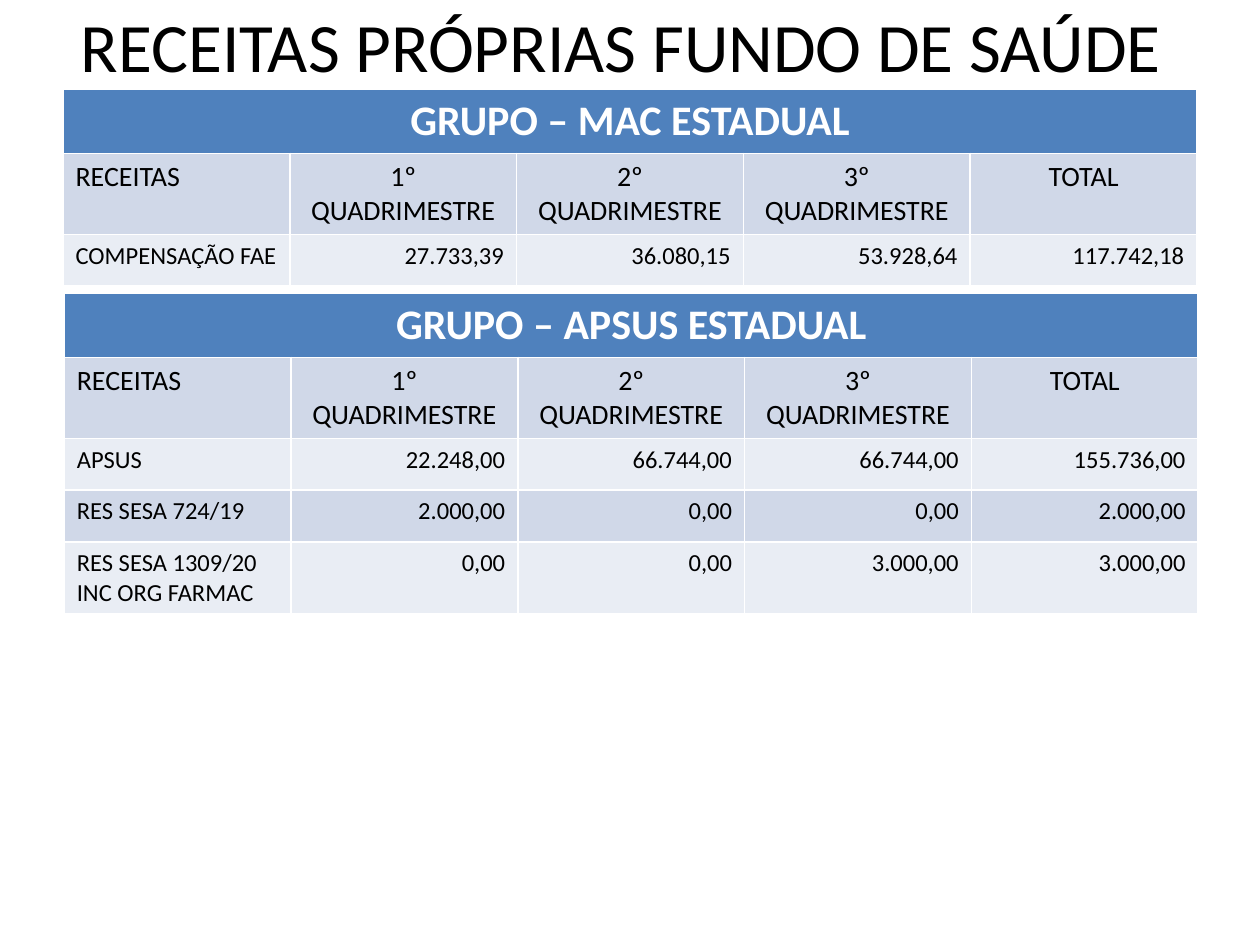
import pptx
import pptx.dml.color
import pptx.enum.text
import pptx.util

Inches = pptx.util.Inches
ALIGN = pptx.enum.text.PP_ALIGN
ANCHOR = pptx.enum.text.MSO_ANCHOR

TITLE = "RECEITAS PRÓPRIAS FUNDO DE SAÚDE"
HEADINGS = ["RECEITAS", "1º QUADRIMESTRE", "2º QUADRIMESTRE", "3º QUADRIMESTRE", "TOTAL"]
GROUPS = [
    {"name": "GRUPO – MAC ESTADUAL", "at": (0.5, 0.71), "rows": [
        ["COMPENSAÇÃO FAE", "27.733,39", "36.080,15", "53.928,64", "117.742,18"],
    ]},
    {"name": "GRUPO – APSUS ESTADUAL", "at": (0.51, 2.33), "rows": [
        ["APSUS", "22.248,00", "66.744,00", "66.744,00", "155.736,00"],
        ["RES SESA 724/19", "2.000,00", "0,00", "0,00", "2.000,00"],
        ["RES SESA 1309/20\nINC ORG FARMAC", "0,00", "0,00", "3.000,00", "3.000,00"],
    ]},
]
COL_WIDTH, ROW_HEIGHT = 1.8, 0.41
BAND_FILLS = ["E9EDF4", "D0D8E8"]
TITLE_FONT = {"name": "Calibri", "size": pptx.util.Pt(39.6), "bold": False}
GROUP_FONT = {"name": "Calibri", "size": pptx.util.Pt(24), "bold": True}
HEADING_FONT = {"name": "Calibri", "size": pptx.util.Pt(16), "bold": False}
BODY_FONT = {"name": "Calibri", "size": pptx.util.Pt(14), "bold": False}


def set_color(fmt, color):
    fmt.rgb = pptx.dml.color.RGBColor.from_string(color)


def write(tf, text, font, color, align):
    tf.text = text
    for p in tf.paragraphs:
        p.alignment = align
        for r in p.runs:
            for key, value in font.items():
                setattr(r.font, key, value)
            set_color(r.font.color, color)


def fill_cell(cell, text, fill, font, color, align):
    cell.fill.solid()
    set_color(cell.fill.fore_color, fill)
    write(cell.text_frame, text, font, color, align)


def add_group(s, group):
    rows = [HEADINGS] + group["rows"]
    n_rows, n_cols = len(rows) + 1, len(HEADINGS)
    left, top = group["at"]
    table = s.shapes.add_table(
        n_rows, n_cols, Inches(left), Inches(top),
        Inches(COL_WIDTH * n_cols), Inches(ROW_HEIGHT * n_rows)).table
    table.cell(0, 0).merge(table.cell(0, n_cols - 1))
    fill_cell(table.cell(0, 0), group["name"], "4F81BD", GROUP_FONT, "FFFFFF", ALIGN.CENTER)
    for i, row in enumerate(rows, 1):
        font, value_align = (HEADING_FONT, ALIGN.CENTER) if i == 1 else (BODY_FONT, ALIGN.RIGHT)
        for j, text in enumerate(row):
            align = value_align if j else ALIGN.LEFT
            fill_cell(table.cell(i, j), text, BAND_FILLS[i % 2], font, "000000", align)


def main():
    prs = pptx.Presentation()
    prs.slide_width, prs.slide_height = Inches(10), Inches(7.5)
    s = prs.slides.add_slide(prs.slide_layouts[5])
    title = s.shapes.title
    title.left, title.top = Inches(0.43), Inches(0)
    title.width, title.height = Inches(9), Inches(0.71)
    title.text_frame.vertical_anchor = ANCHOR.MIDDLE
    write(title.text_frame, TITLE, TITLE_FONT, "000000", ALIGN.CENTER)
    for group in GROUPS:
        add_group(s, group)
    prs.save("out.pptx")


if __name__ == "__main__":
    main()
